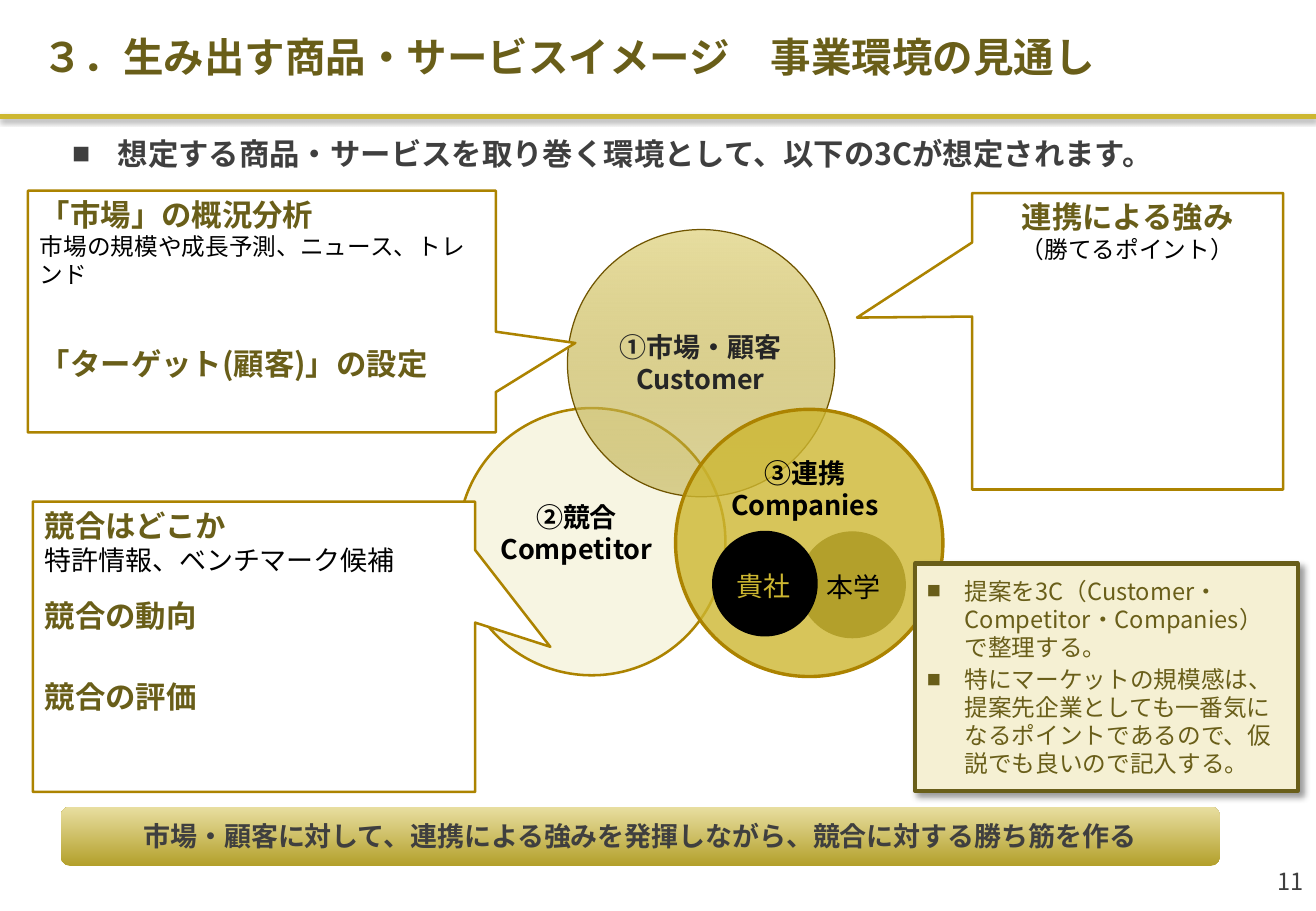
from lxml.etree import SubElement
from pptx import Presentation
from pptx.dml.color import RGBColor
from pptx.enum.lang import MSO_LANGUAGE_ID
from pptx.enum.shapes import MSO_CONNECTOR, MSO_SHAPE
from pptx.enum.text import MSO_ANCHOR, PP_ALIGN
from pptx.oxml.ns import qn
from pptx.util import Pt

PX = 9144  # 100 px to the inch
WIDE, HIGH = 1083, 750
FONT = "Noto Sans CJK JP"
LEAD = 1.185  # line height per point of text

WHITE = RGBColor(0xFF, 0xFF, 0xFF)
BLACK = RGBColor(0, 0, 0)
INK = RGBColor(0x26, 0x26, 0x26)
GRAY = RGBColor(0x3F, 0x3F, 0x3F)
OLIVE = RGBColor(0x69, 0x5E, 0x19)
GOLD = RGBColor(0xCD, 0xB7, 0x31)
MOSS = RGBColor(0xB3, 0xA0, 0x2B)
SAND = RGBColor(0xE8, 0xDE, 0xA0)
CREAM = RGBColor(0xF5, 0xF1, 0xD7)
PAPER = RGBColor(0xF5, 0xF0, 0xD3)
BRONZE = RGBColor(0xAC, 0x83, 0x00)
BROWN = RGBColor(0x70, 0x55, 0x00)

MID, LOW = MSO_ANCHOR.MIDDLE, MSO_ANCHOR.BOTTOM
CENTER, RIGHT = PP_ALIGN.CENTER, PP_ALIGN.RIGHT
OVAL, CALL = MSO_SHAPE.OVAL, MSO_SHAPE.RECTANGULAR_CALLOUT
RECT, ROUND = MSO_SHAPE.RECTANGLE, MSO_SHAPE.ROUNDED_RECTANGLE

HEAD = dict(size=18, color=OLIVE, bold=True)
BODY = dict(size=14)
NAME = dict(size=16, bold=True, align=CENTER)
MEMO = dict(size=14, color=OLIVE, hang=31, gap=2.8)
EDGE = dict(fill=WHITE, line=BRONZE, weight=1.5)

# Each part: shape kind (None for a text box), box in px, look, lines of text
PARTS = [
    (None, (50, 107, 1009, 563), {}, [
        ("想定する商品・サービスを取り巻く環境として、以下の3Cが想定されます。",
         dict(size=18, color=GRAY, bold=True, hang=37))]),
    (CALL, (800, 159, 256, 244), dict(EDGE, tip=(-0.87, -0.08)), [
        ("連携による強み", dict(HEAD, align=CENTER)),
        ("（勝てるポイント）", dict(BODY, align=CENTER))]),
    (OVAL, (377, 336, 220, 220),
     dict(fill=CREAM, alpha=70, line=BRONZE, weight=1.5), []),
    (OVAL, (467, 189, 220, 220),
     dict(fill=(MOSS, SAND), alpha=46, line=BROWN, weight=0.75), []),
    (None, (474, 269, 205, 59), dict(anchor=MID), [
        ("①市場・顧客Customer", dict(NAME, color=INK))]),
    (OVAL, (556, 337, 220, 220),
     dict(fill=GOLD, alpha=80, line=BRONZE, weight=2), []),
    (None, (391, 413, 167, 51), dict(anchor=MID), [
        ("②競合", NAME), ("Competitor", NAME)]),
    (CALL, (27, 413, 364, 239), dict(EDGE, tip=(0.67, 0)), [
        ("競合はどこか", HEAD),
        ("特許情報、ベンチマーク候補", dict(size=16)),
        ("競合の動向", dict(HEAD, gap=13)),
        ("競合の評価", dict(HEAD, gap=27))]),
    (None, (586, 373, 153, 59), dict(anchor=MID), [
        ("③連携", NAME), ("Companies", NAME)]),
    (None, (25, 0, 1033, 94), dict(anchor=MID), [
        ("３．生み出す商品・サービスイメージ　事業環境の見通し",
         dict(HEAD, size=24))]),
    (CALL, (23, 157, 385, 199), dict(EDGE, tip=(0.67, 0.13)), [
        ("「市場」の概況分析", HEAD),
        ("市場の規模や成長予測、ニュース、トレンド", BODY),
        ("「ターゲット(顧客)」の設定", dict(HEAD, gap=34))]),
    (OVAL, (658, 438, 87, 87), dict(fill=MOSS, line=MOSS, weight=0.75), []),
    (OVAL, (586, 437, 87, 87), dict(fill=BLACK), []),
    (None, (659, 465, 87, 37), {}, [("本学", dict(size=16, align=CENTER))]),
    (None, (583, 464, 90, 37), {}, [
        ("貴社", dict(size=16, color=GOLD, align=CENTER))]),
    (None, (997, 702, 86, 40), dict(anchor=LOW), [
        ("11", dict(size=14, color=GRAY, align=RIGHT))]),
    (RECT, (753, 464, 315, 187),
     dict(fill=PAPER, line=OLIVE, weight=2.5, shade=(40, 4, 3, 45),
          anchor=MID, pad=12), [
        ("提案を3C（Customer・Competitor・Companies）で整理する。", MEMO),
        ("特にマーケットの規模感は、提案先企業としても一番気になるポイントで"
         "あるので、仮説でも良いので記入する。", MEMO)]),
    (ROUND, (50, 664, 954, 49), dict(fill=(MOSS, SAND), anchor=MID), [
        ("市場・顧客に対して、連携による強みを発揮しながら、競合に対する勝ち筋を作る",
         dict(NAME, color=GRAY))]),
]


def write(para, text, size, color=BLACK, bold=False, align=PP_ALIGN.LEFT,
          gap=0, hang=0):
    """Fill a paragraph; hang is the bullet's hanging indent in px."""
    para.alignment = align
    para.line_spacing = Pt(round(size * LEAD, 1))
    para.space_before = Pt(gap)
    if hang:
        props = para._p.get_or_add_pPr()
        props.set("marL", str(hang * PX))
        props.set("indent", str(-hang * PX))
        SubElement(props, qn("a:buSzPct"), val="60000")
        SubElement(props, qn("a:buFont"), typeface=FONT)
        SubElement(props, qn("a:buChar"), char="■")
    run = para.add_run()
    run.text = text
    font = run.font
    font.name, font.size, font.bold = FONT, Pt(size), bold
    font.color.rgb = color
    font.language_id = MSO_LANGUAGE_ID.JAPANESE
    SubElement(run._r.get_or_add_rPr(), qn("a:ea"), typeface=FONT)


def cast(effects, alpha, blur, dist, angle):
    """Add an outer shadow to an effect list."""
    outer = SubElement(effects, qn("a:outerShdw"), blurRad=str(Pt(blur)),
                       dist=str(Pt(dist)), dir=str(angle * 60000),
                       algn="t", rotWithShape="0")
    tint = SubElement(outer, qn("a:srgbClr"), val="000000")
    SubElement(tint, qn("a:alpha"), val=str(alpha * 1000))


def paint(shape, fill, alpha=100, line=None, weight=1, shade=None, tip=None):
    """Style a shape; a pair of fill colours runs from bottom to top."""
    shape.shadow.inherit = False
    if isinstance(fill, RGBColor):
        shape.fill.solid()
        shape.fill.fore_color.rgb = fill
    else:
        shape.fill.gradient()
        shape.fill.gradient_angle = 90
        for stop, color in zip(shape.fill.gradient_stops, fill):
            stop.color.rgb = color
    props = shape._element.spPr
    if alpha < 100:
        tint = props.find(".//" + qn("a:srgbClr"))
        SubElement(tint, qn("a:alpha"), val=str(alpha * 1000))
    if line is None:
        shape.line.fill.background()
    else:
        shape.line.color.rgb = line
        shape.line.width = Pt(weight)
    if shade:
        cast(props.find(qn("a:effectLst")), *shade)
    if tip:
        shape.adjustments[0], shape.adjustments[1] = tip


def place(slide, kind, box, look, lines):
    look = dict(look)
    anchor = look.pop("anchor", MSO_ANCHOR.TOP)
    pad = look.pop("pad", 5)
    spot = [n * PX for n in box]
    if kind is None:
        shape = slide.shapes.add_textbox(*spot)
    else:
        shape = slide.shapes.add_shape(kind, *spot)
        paint(shape, **look)
    frame = shape.text_frame
    frame.word_wrap = True
    frame.vertical_anchor = anchor
    frame.margin_left = frame.margin_right = 10 * PX
    frame.margin_top = frame.margin_bottom = pad * PX
    for i, (text, style) in enumerate(lines):
        para = frame.add_paragraph() if i else frame.paragraphs[0]
        write(para, text, **style)


def rule(slide, y):
    bar = slide.shapes.add_connector(
        MSO_CONNECTOR.STRAIGHT, 0, y * PX, WIDE * PX, y * PX)
    bar.line.color.rgb = GOLD
    bar.line.width = Pt(3)
    cast(SubElement(bar._element.spPr, qn("a:effectLst")), 38, 3.1, 1.6, 90)


def main():
    deck = Presentation()
    deck.slide_width, deck.slide_height = WIDE * PX, HIGH * PX
    slide = deck.slides.add_slide(deck.slide_layouts[6])
    rule(slide, 96)
    for part in PARTS:
        place(slide, *part)
    deck.save("out.pptx")


if __name__ == "__main__":
    main()
